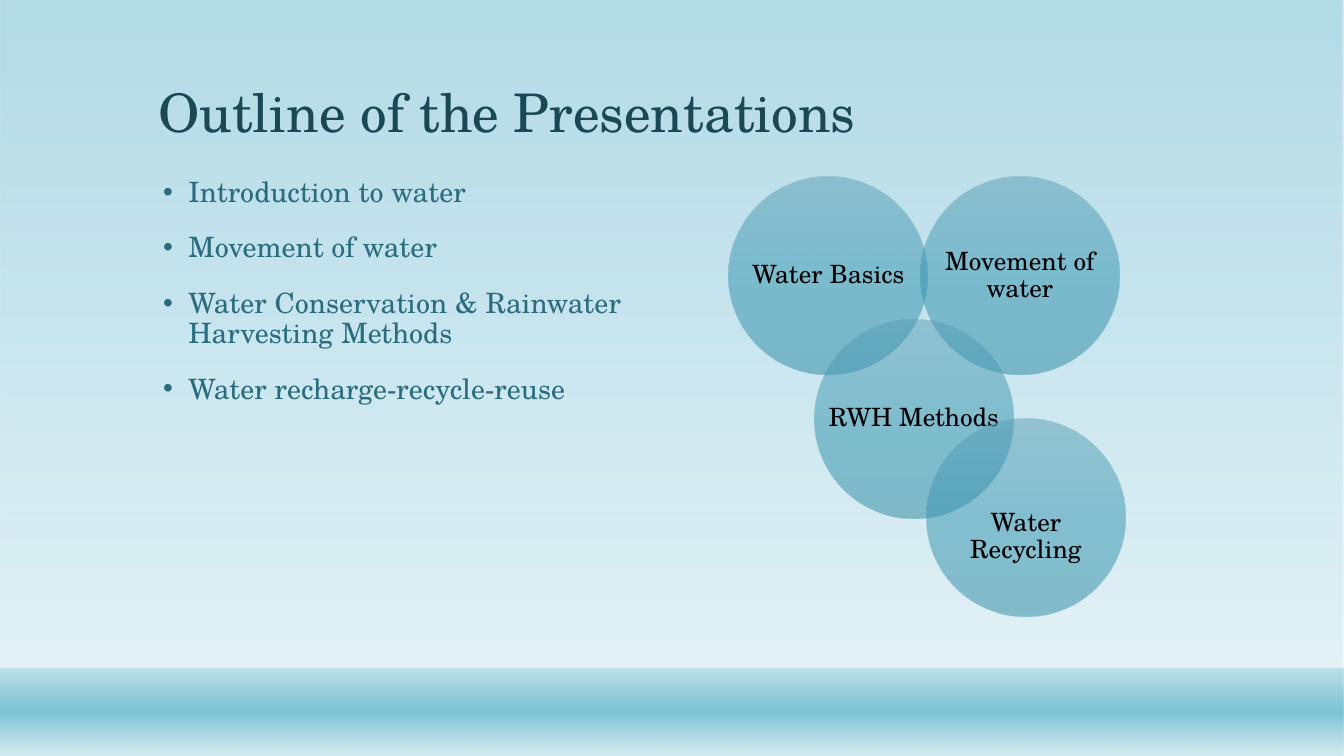
from lxml.etree import SubElement
from pptx import Presentation
from pptx.dml.color import RGBColor
from pptx.enum.shapes import MSO_SHAPE as Shape
from pptx.enum.text import MSO_ANCHOR as Anchor, MSO_AUTO_SIZE as AutoSize, PP_ALIGN as Align
from pptx.oxml.ns import qn
from pptx.util import Inches, Pt

FONT = "TeX Gyre Schola"
TITLE_COLOR = RGBColor(0x1B, 0x48, 0x55)
BODY_COLOR = RGBColor(0x29, 0x6D, 0x7F)
LABEL_COLOR = RGBColor(0x00, 0x00, 0x00)
WATER = RGBColor(0x7D, 0xC2, 0xD6)
MIST = RGBColor(0xD4, 0xEB, 0xF1)
CIRCLE_TOP = RGBColor(0x58, 0x9E, 0xB5)
CIRCLE_MIDDLE = RGBColor(0x30, 0x94, 0xB0)
CIRCLE_BOTTOM = RGBColor(0x26, 0x87, 0xA1)

TITLE = "Outline of the Presentations"
TOPICS = [
    "Introduction to water",
    "Movement of water",
    "Water Conservation & Rainwater Harvesting Methods",
    "Water recharge-recycle-reuse",
]
CIRCLES = [
    ("Water Basics", 7.23, 1.75, 0),
    ("Movement of water", 9.13, 1.75, 0),
    ("RWH Methods", 8.08, 3.17, 0),
    ("Water Recycling", 9.19, 4.15, 0.38),
]
SKY_STOPS = [(0, WATER, 58), (88, MIST, 65)]
POOL_STOPS = [(1, WATER, 38), (49, WATER, 100), (100, MIST, 89)]
CIRCLE_STOPS = [(0, CIRCLE_TOP, 50), (50, CIRCLE_MIDDLE, 50), (100, CIRCLE_BOTTOM, 50)]

WIDTH, HEIGHT = 13.33, 7.5
POOL_TOP = 6.63
MARGIN = 1.47
DIAMETER = 1.97
INSET = 0.07


def add_gradient_shape(slide, kind, area, stops):
    shape = slide.shapes.add_shape(kind, *map(Inches, area))
    shape.shadow.inherit = False
    shape.line.fill.background()
    shape.fill.gradient()
    shape.fill.gradient_angle = 270
    stop_list = shape._element.spPr.find(qn("a:gradFill")).find(qn("a:gsLst"))
    for stop in list(stop_list):
        stop_list.remove(stop)
    for position, color, opacity in stops:
        stop = SubElement(stop_list, qn("a:gs"), pos=str(position * 1000))
        tint = SubElement(stop, qn("a:srgbClr"), val=str(color))
        SubElement(tint, qn("a:alpha"), val=str(opacity * 1000))


def add_text_frame(slide, area):
    frame = slide.shapes.add_textbox(*map(Inches, area)).text_frame
    frame.word_wrap = True
    return frame


def format_paragraph(para, size, color, align=Align.LEFT):
    para.alignment = align
    para.line_spacing = 0.9
    para.font.name = FONT
    para.font.size = Pt(size)
    para.font.color.rgb = color


def add_bullet(para):
    properties = para._p.get_or_add_pPr()
    properties.set("marL", str(Inches(0.3)))
    properties.set("indent", str(Inches(-0.25)))
    SubElement(properties, qn("a:buFont"), typeface="Arial")
    SubElement(properties, qn("a:buChar"), char="•")


def add_title(slide):
    title = slide.shapes.title
    slide.shapes._spTree.append(title._element)
    title.left, title.top = Inches(MARGIN), Inches(0.29)
    title.width, title.height = Inches(10.4), Inches(1.19)
    frame = title.text_frame
    frame.text = TITLE
    frame.auto_size = AutoSize.NONE
    frame.vertical_anchor = Anchor.BOTTOM
    format_paragraph(frame.paragraphs[0], 38, TITLE_COLOR)


def add_topics(slide):
    frame = add_text_frame(slide, (MARGIN, 1.72, 5, 4.53))
    for index, topic in enumerate(TOPICS):
        para = frame.add_paragraph() if index else frame.paragraphs[0]
        para.text = topic
        add_bullet(para)
        format_paragraph(para, 20, BODY_COLOR)
        if index:
            para.space_before = Pt(18)


def add_circle(slide, label, left, top, drop):
    area = (left, top, DIAMETER, DIAMETER)
    add_gradient_shape(slide, Shape.OVAL, area, CIRCLE_STOPS)
    frame = add_text_frame(slide, area)
    frame.margin_left = frame.margin_right = frame.margin_bottom = Inches(INSET)
    frame.margin_top = Inches(INSET + drop)
    frame.vertical_anchor = Anchor.MIDDLE
    frame.text = label
    format_paragraph(frame.paragraphs[0], 18, LABEL_COLOR, Align.CENTER)


def main():
    deck = Presentation()
    deck.slide_width, deck.slide_height = Inches(WIDTH), Inches(HEIGHT)
    slide = deck.slides.add_slide(deck.slide_layouts[5])
    add_gradient_shape(slide, Shape.RECTANGLE, (0, 0, WIDTH, HEIGHT), SKY_STOPS)
    add_gradient_shape(slide, Shape.RECTANGLE, (0, POOL_TOP, WIDTH, HEIGHT - POOL_TOP), POOL_STOPS)
    add_title(slide)
    add_topics(slide)
    for circle in CIRCLES:
        add_circle(slide, *circle)
    deck.save("out.pptx")


if __name__ == "__main__":
    main()
